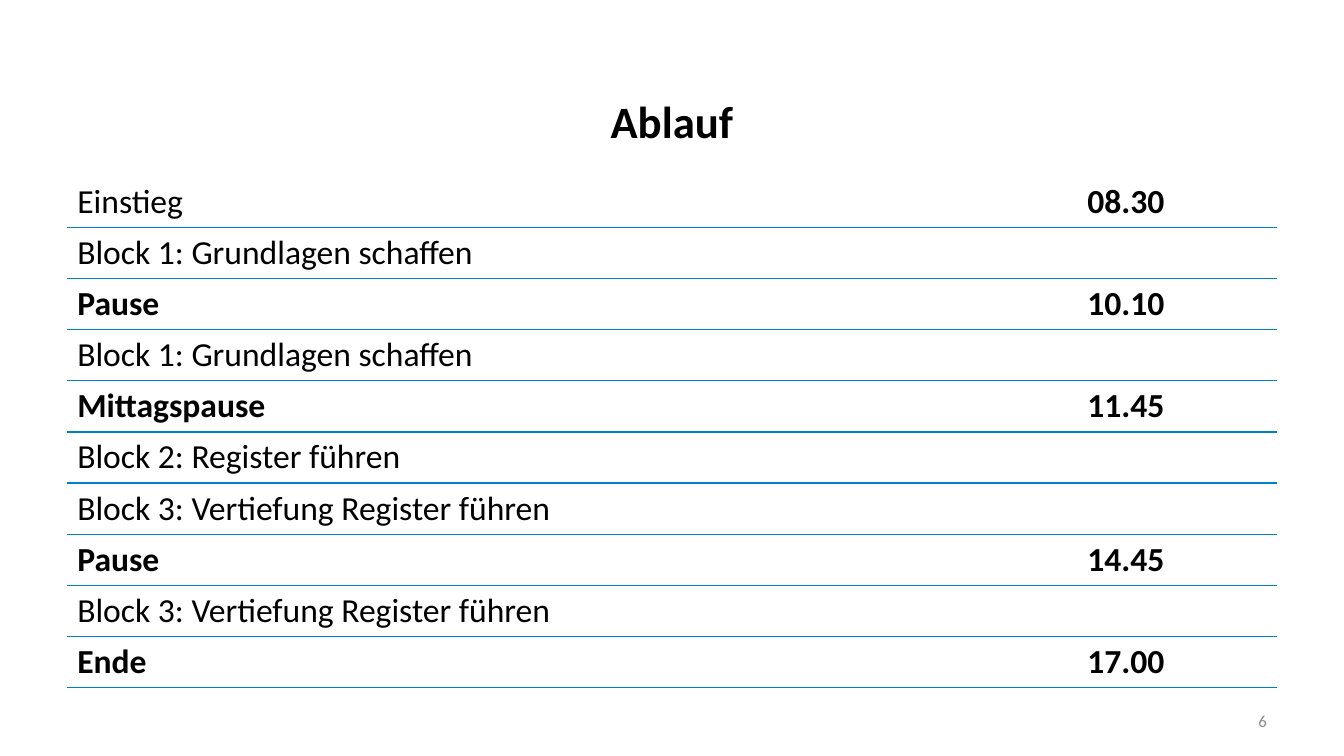
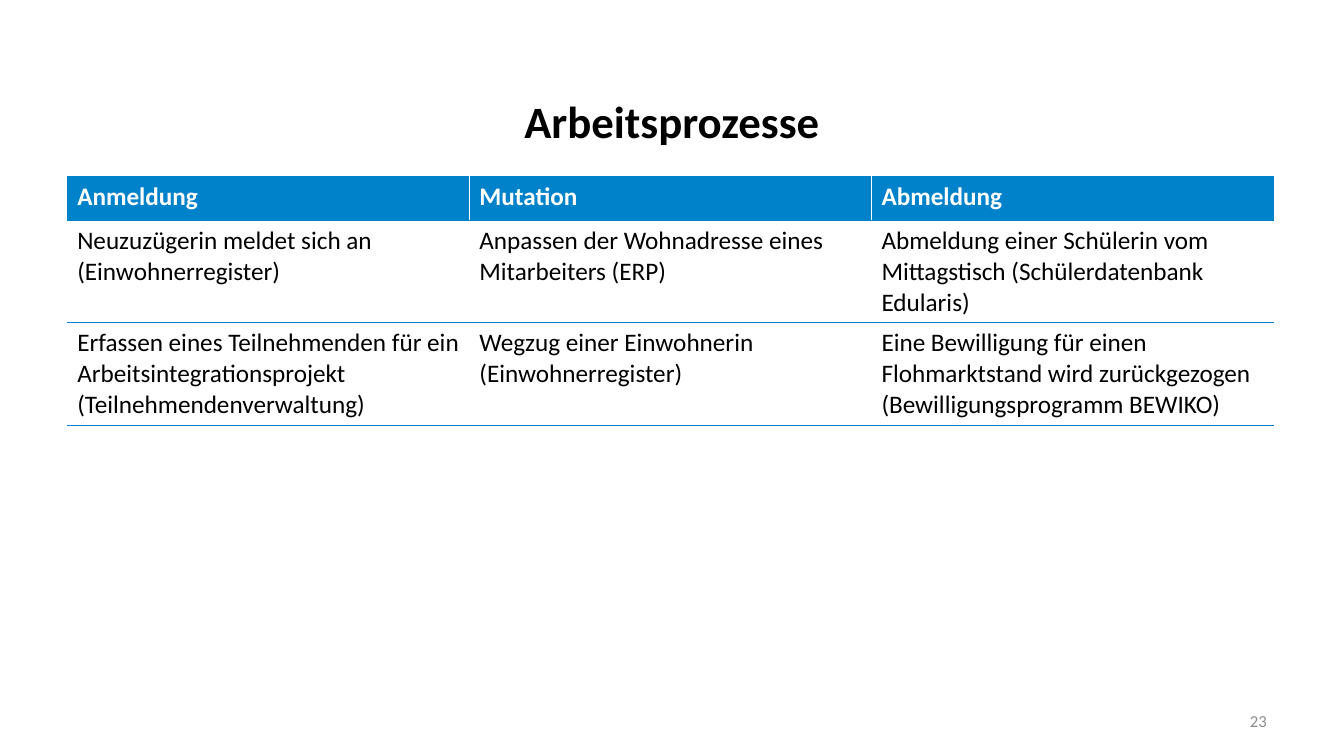
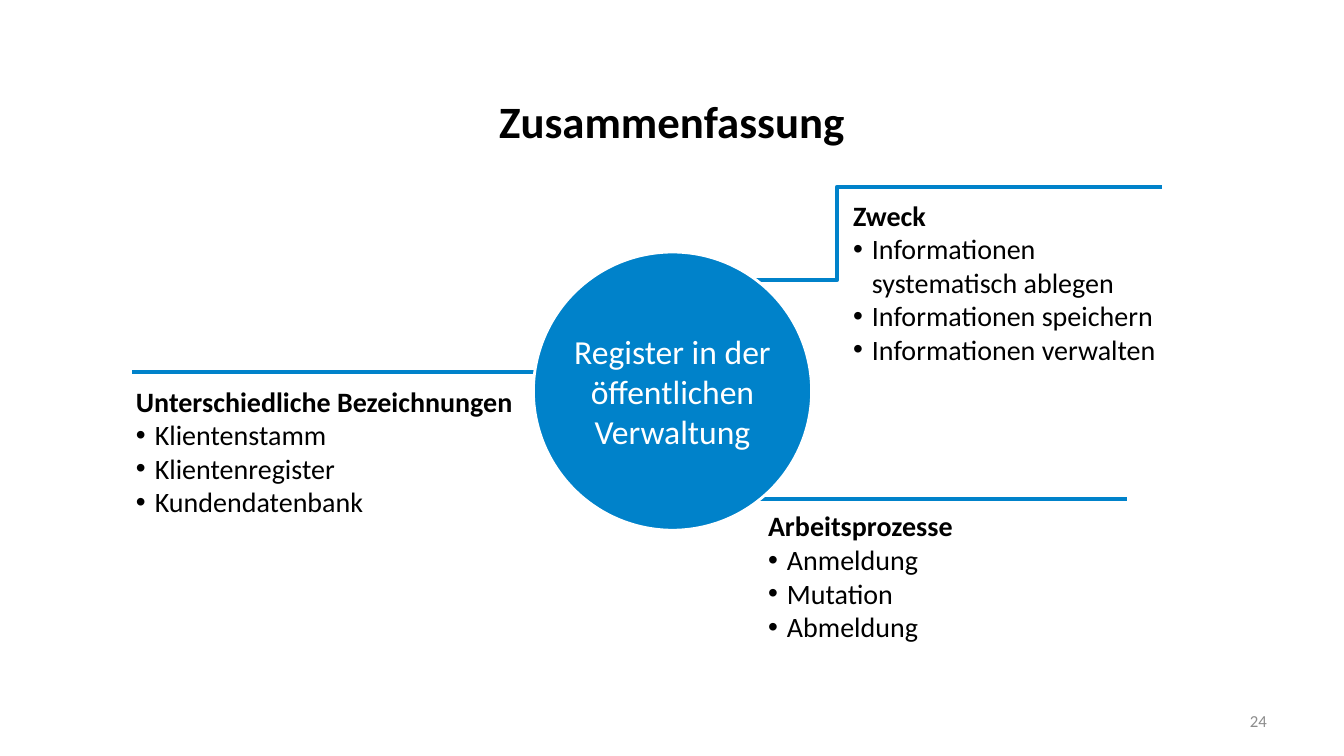
from dataclasses import dataclass

from lxml import etree
from pptx import Presentation
from pptx import util as u
from pptx.dml.color import RGBColor
from pptx.enum import shapes, text
from pptx.oxml.ns import qn

PX = 9525  # EMU in one px, 96 px to the inch
HUES = {"blue": "0082CA", "black": "000000", "white": "FFFFFF", "gray": "8C8C8C"}
FACE = "Calibri"
PLAIN = "{2D5ABB26-0587-4C30-8999-92F81FD0307C}"  # table style: no style, no grid
INDENT = 18
ROW = 42
LEFT, TOP, WIDTH = 64, 168, 1152


@dataclass(frozen=True)
class Box:
    x: int
    y: int
    w: int
    h: int

    def emu(self) -> list[u.Emu]:
        return [px(n) for n in (self.x, self.y, self.w, self.h)]


@dataclass(frozen=True)
class Look:
    size: int
    hue: str = "black"
    bold: bool = False


@dataclass(frozen=True)
class Note:
    box: Box
    head: str
    items: tuple[str, ...]


@dataclass(frozen=True)
class Line:
    x1: int
    y1: int
    x2: int
    y2: int
    kind: shapes.MSO_CONNECTOR = shapes.MSO_CONNECTOR.STRAIGHT


TITLE = Box(LEFT, 81, WIDTH, 68)
NUMBER = Box(918, 667, 298, 38)
CIRCLE = Box(508, 240, 265, 265)

PLAN = (
    ("Einstieg", "08.30"),
    ("Block 1: Grundlagen schaffen", ""),
    ("Pause", "10.10"),
    ("Block 1: Grundlagen schaffen", ""),
    ("Mittagspause", "11.45"),
    ("Block 2: Register führen", ""),
    ("Block 3: Vertiefung Register führen", ""),
    ("Pause", "14.45"),
    ("Block 3: Vertiefung Register führen", ""),
    ("Ende", "17.00"),
)
TASKS = (
    ("Anmeldung", "Mutation", "Abmeldung"),
    ("Neuzuzügerin meldet sich an (Einwohnerregister)",
     "Anpassen der Wohnadresse eines Mitarbeiters (ERP)",
     "Abmeldung einer Schülerin vom Mittagstisch (Schülerdatenbank Edularis)"),
    ("Erfassen eines Teilnehmenden für ein Arbeitsintegrationsprojekt "
     "(Teilnehmendenverwaltung)",
     "Wegzug einer Einwohnerin (Einwohnerregister)",
     "Eine Bewilligung für einen Flohmarktstand wird zurückgezogen "
     "(Bewilligungsprogramm BEWIKO)"),
)
NOTES = (
    Note(Box(722, 480, 351, 168), "Arbeitsprozesse",
         ("Anmeldung", "Mutation", "Abmeldung")),
    Note(Box(803, 184, 319, 244), "Zweck",
         ("Informationen systematisch ablegen", "Informationen speichern",
          "Informationen verwalten")),
    Note(Box(120, 361, 390, 265), "Unterschiedliche Bezeichnungen",
         ("Klientenstamm", "Klientenregister", "Kundendatenbank")),
)
LINES = (
    Line(126, 354, 539, 354),
    Line(707, 475, 1073, 475),
    Line(935, 178, 659, 267, shapes.MSO_CONNECTOR.ELBOW),
    Line(839, 178, 1107, 178),
)


def px(n: int) -> u.Emu:
    return u.Emu(n * PX)


def rgb(hue: str) -> RGBColor:
    return RGBColor.from_string(HUES[hue])


def assign(item, **values) -> None:
    for name, value in values.items():
        setattr(item, name, value)


def write(para, words: str, look: Look, align=None) -> None:
    para.alignment = align
    run = para.add_run()
    run.text = words
    assign(run.font, name=FACE, size=u.Pt(look.size), bold=look.bold)
    run.font.color.rgb = rgb(look.hue)


def bullet(para) -> None:
    props = para._p.get_or_add_pPr()
    assign_xml = {"marL": px(INDENT), "indent": -px(INDENT)}
    for name, value in assign_xml.items():
        props.set(name, str(int(value)))
    etree.SubElement(props, qn("a:buFont"), typeface="Arial")
    etree.SubElement(props, qn("a:buChar"), char="•")


def edge(cell, side: str, hue: str) -> None:
    """Draw one border of a cell; call it before the cell is filled."""
    line = etree.SubElement(cell._tc.get_or_add_tcPr(), qn(f"a:ln{side}"),
                            w=str(int(u.Pt(1))))
    fill = etree.SubElement(line, qn("a:solidFill"))
    etree.SubElement(fill, qn("a:srgbClr"), val=HUES[hue])


def add_page(deck, title: str, number: int):
    page = deck.slides.add_slide(deck.slide_layouts[5])
    head = page.shapes.title
    assign(head, **dict(zip(("left", "top", "width", "height"), TITLE.emu())))
    foot = page.shapes.add_textbox(*NUMBER.emu())
    for shape, words, look, align in (
        (head, title, Look(32, bold=True), text.PP_ALIGN.CENTER),
        (foot, str(number), Look(12, "gray"), text.PP_ALIGN.RIGHT),
    ):
        frame = shape.text_frame
        assign(frame, word_wrap=True, auto_size=text.MSO_AUTO_SIZE.NONE,
               vertical_anchor=text.MSO_ANCHOR.MIDDLE)
        write(frame.paragraphs[0], words, look, align)
    return page


def add_grid(page, rows, widths: tuple[int, ...], size: int, header: bool) -> None:
    """Draw a table ruled below each row; without a header, timed breaks are bold."""
    box = Box(LEFT, TOP, sum(widths), ROW * len(rows))
    grid = page.shapes.add_table(len(rows), len(widths), *box.emu()).table
    assign(grid, first_row=header, horz_banding=False)
    grid._tbl.tblPr.find(qn("a:tableStyleId")).text = PLAIN
    for col, width in zip(grid.columns, widths):
        col.width = px(width)
    for r, row in enumerate(rows):
        grid.rows[r].height = px(ROW)
        top = header and r == 0
        for c, words in enumerate(row):
            cell = grid.cell(r, c)
            if top and c > 0:
                edge(cell, "L", "white")
            if top and c < len(row) - 1:
                edge(cell, "R", "white")
            edge(cell, "B", "blue")
            if top:
                cell.fill.solid()
                cell.fill.fore_color.rgb = rgb("blue")
            else:
                cell.fill.background()
            timed = not header and row[-1] != "" and (r > 0 or c > 0)
            look = Look(size, "white" if top else "black", top or timed)
            write(cell.text_frame.paragraphs[0], words, look)


def add_note(page, note: Note) -> None:
    frame = page.shapes.add_textbox(*note.box.emu()).text_frame
    frame.word_wrap = True
    write(frame.paragraphs[0], note.head, Look(20, bold=True))
    for item in note.items:
        para = frame.add_paragraph()
        bullet(para)
        write(para, item, Look(20))


def add_line(page, line: Line) -> None:
    ends = [px(n) for n in (line.x1, line.y1, line.x2, line.y2)]
    shape = page.shapes.add_connector(line.kind, *ends)
    shape.line.width = u.Pt(2.75)
    shape.line.color.rgb = rgb("blue")
    etree.SubElement(shape._element.spPr, qn("a:effectLst"))


def add_circle(page, words: str) -> None:
    shape = page.shapes.add_shape(shapes.MSO_SHAPE.OVAL, *CIRCLE.emu())
    shape.shadow.inherit = False
    shape.fill.solid()
    shape.fill.fore_color.rgb = rgb("blue")
    shape.line.color.rgb = rgb("white")
    shape.line.width = u.Pt(2)
    frame = shape.text_frame
    assign(frame, word_wrap=True, vertical_anchor=text.MSO_ANCHOR.MIDDLE,
           margin_left=0, margin_top=0, margin_right=0, margin_bottom=0)
    write(frame.paragraphs[0], words, Look(24, "white"), text.PP_ALIGN.CENTER)


def main() -> None:
    deck = Presentation()
    assign(deck, slide_width=px(1280), slide_height=px(720))

    add_grid(add_page(deck, "Ablauf", 6), PLAN, (962, 190), 24, header=False)
    add_grid(add_page(deck, "Arbeitsprozesse", 23), TASKS, (383,) * 3, 18, header=True)

    page = add_page(deck, "Zusammenfassung", 24)
    for note in NOTES:
        add_note(page, note)
    for line in LINES:
        add_line(page, line)
    add_circle(page, "Register in der öffentlichen Verwaltung")

    deck.save("out.pptx")


if __name__ == "__main__":
    main()
